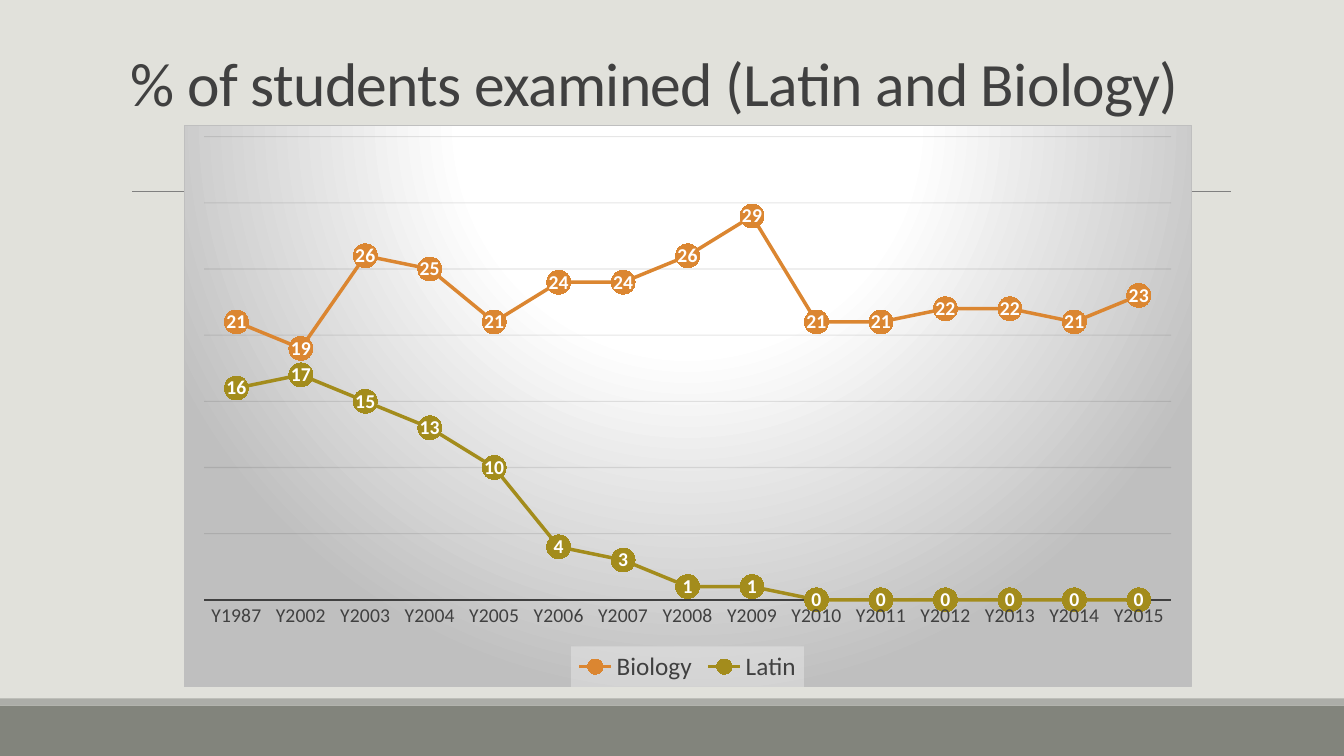
import pptx
import pptx.chart.data
import pptx.dml.color
import pptx.enum.chart
import pptx.enum.shapes
import pptx.enum.text
import pptx.oxml
import pptx.oxml.ns
import pptx.util

Inches, Pt = pptx.util.Inches, pptx.util.Pt
ec = pptx.enum.chart
qn = pptx.oxml.ns.qn
NS = pptx.oxml.ns.nsdecls("a", "c")

YEARS = ["Y1987"] + [f"Y{year}" for year in range(2002, 2016)]
SERIES = [
    ("Biology", "DB8631", [21, 19, 26, 25, 21, 24, 24, 26, 29, 21, 21, 22, 22, 21, 23]),
    ("Latin", "A38C1C", [16, 17, 15, 13, 10, 4, 3, 1, 1, 0, 0, 0, 0, 0, 0]),
]


def rgb(code):
    return pptx.dml.color.RGBColor.from_string(code)


def paint(fill, code):
    fill.solid()
    fill.fore_color.rgb = rgb(code)


def stroke(line, code, width):
    line.color.rgb = rgb(code)
    line.width = Pt(width)


def style(font, size, code, bold=False):
    font.name = "Calibri"
    font.size = Pt(size)
    font.bold = bold
    font.color.rgb = rgb(code)


def xml(text):
    return pptx.oxml.parse_xml(text)


def add_frame(slide, width, height):
    paint(slide.background.fill, "E1E1DB")
    # Footer bands
    for top, deep, code in [(height - 0.5, 0.5, "82847C"), (height - 0.57, 0.07, "ACADA8")]:
        band = slide.shapes.add_shape(
            pptx.enum.shapes.MSO_SHAPE.RECTANGLE,
            0, Inches(top), Inches(width), Inches(deep))
        band.shadow.inherit = False
        paint(band.fill, code)
        band.line.fill.background()
    # Rule under the title
    rule = slide.shapes.add_connector(
        pptx.enum.shapes.MSO_CONNECTOR.STRAIGHT,
        Inches(1.31), Inches(1.9), Inches(12.21), Inches(1.9))
    stroke(rule.line, "808080", 0.5)
    rule._element.spPr.append(xml(f"<a:effectLst {NS}/>"))


def add_title(slide, left, top, width, height):
    box = slide.shapes.add_textbox(*map(Inches, (left, top, width, height)))
    frame = box.text_frame
    frame.word_wrap = True
    frame.vertical_anchor = pptx.enum.text.MSO_ANCHOR.BOTTOM
    para = frame.paragraphs[0]
    run = para.add_run()
    run.text = "% of students examined (Latin and Biology)"
    para.line_spacing = 0.85
    style(para.font, 44, "404040")
    run._r.get_or_add_rPr().set("spc", "-50")


def style_series(line, code):
    line.smooth = False
    stroke(line.format.line, code, 2.5)
    line.marker.style = ec.XL_MARKER_STYLE.CIRCLE
    line.marker.size = 17
    paint(line.marker.format.fill, code)
    line.marker.format.line.fill.background()
    labels = line.data_labels
    labels.show_value = True
    labels.position = ec.XL_LABEL_POSITION.CENTER
    labels.number_format = "0"
    labels.number_format_is_linked = False
    style(labels.font, 14, "FFFFFF", True)


def style_axes(chart):
    years = chart.category_axis
    years.major_tick_mark = years.minor_tick_mark = ec.XL_TICK_MARK.NONE
    style(years.tick_labels.font, 14, "404040")
    stroke(years.format.line, "404040", 1.5)
    share = chart.value_axis
    share.visible = False
    share.minimum_scale, share.maximum_scale, share.major_unit = 0, 35, 5
    share.has_major_gridlines = True
    stroke(share.major_gridlines.format.line, "0D0D0D", 0.75)
    for tint in chart._chartSpace.xpath(".//c:majorGridlines//a:srgbClr"):
        tint.append(xml(f'<a:alpha {NS} val="10000"/>'))


def style_legend(chart):
    chart.has_legend = True
    legend = chart.legend
    legend.position = ec.XL_LEGEND_POSITION.BOTTOM
    legend.include_in_layout = False
    style(legend.font, 18, "404040")
    legend._element.find(qn("c:overlay")).addnext(xml(
        f'<c:spPr {NS}><a:solidFill><a:srgbClr val="F2F2F2"><a:alpha val="39000"/>'
        '</a:srgbClr></a:solidFill><a:ln><a:noFill/></a:ln></c:spPr>'))


def style_back(chart):
    # Radial gradient and border of the chart area
    stops = "".join(
        f'<a:gs pos="{pos}000"><a:srgbClr val="{code}"/></a:gs>'
        for pos, code in [(0, "FFFFFF"), (39, "FFFFFF"), (100, "BFBFBF")])
    chart._chartSpace.find(qn("c:chart")).addnext(xml(
        f'<c:spPr {NS}><a:gradFill><a:gsLst>{stops}</a:gsLst><a:path path="circle">'
        '<a:fillToRect l="50000" t="-80000" r="50000" b="180000"/></a:path></a:gradFill>'
        '<a:ln w="9525"><a:solidFill><a:srgbClr val="BFBFBF"/></a:solidFill></a:ln></c:spPr>'))
    # Fixed place of the plot inside the chart
    area = chart._chartSpace.find(".//" + qn("c:plotArea"))
    for old in area.findall(qn("c:layout")):
        area.remove(old)
    spots = "".join(
        f'<c:{key} val="{val}"/>' for key, val in
        [("layoutTarget", "inner"), ("xMode", "edge"), ("yMode", "edge"),
         ("x", 0.02), ("y", 0.02), ("w", 0.96), ("h", 0.825)])
    area.insert(0, xml(
        f"<c:layout {NS}><c:manualLayout>{spots}</c:manualLayout></c:layout>"))


def add_lines(slide, left, top, width, height):
    data = pptx.chart.data.CategoryChartData(number_format="0")
    data.categories = YEARS
    for name, code, vals in SERIES:
        data.add_series(name, vals)
    chart = slide.shapes.add_chart(
        ec.XL_CHART_TYPE.LINE_MARKERS,
        *map(Inches, (left, top, width, height)), data).chart
    chart.has_title = False
    style(chart.font, 10, "000000")
    plot = chart.plots[0]
    plot.vary_by_categories = False
    for line, (name, code, vals) in zip(plot.series, SERIES):
        style_series(line, code)
    style_axes(chart)
    style_legend(chart)
    style_back(chart)


def main():
    deck = pptx.Presentation()
    deck.slide_width, deck.slide_height = Inches(13.33), Inches(7.5)
    slide = deck.slides.add_slide(deck.slide_layouts[6])
    add_frame(slide, 13.33, 7.5)
    add_title(slide, 1.2, 0.31, 11, 0.92)
    add_lines(slide, 1.82, 1.24, 10, 5.58)
    deck.save("out.pptx")


if __name__ == "__main__":
    main()
